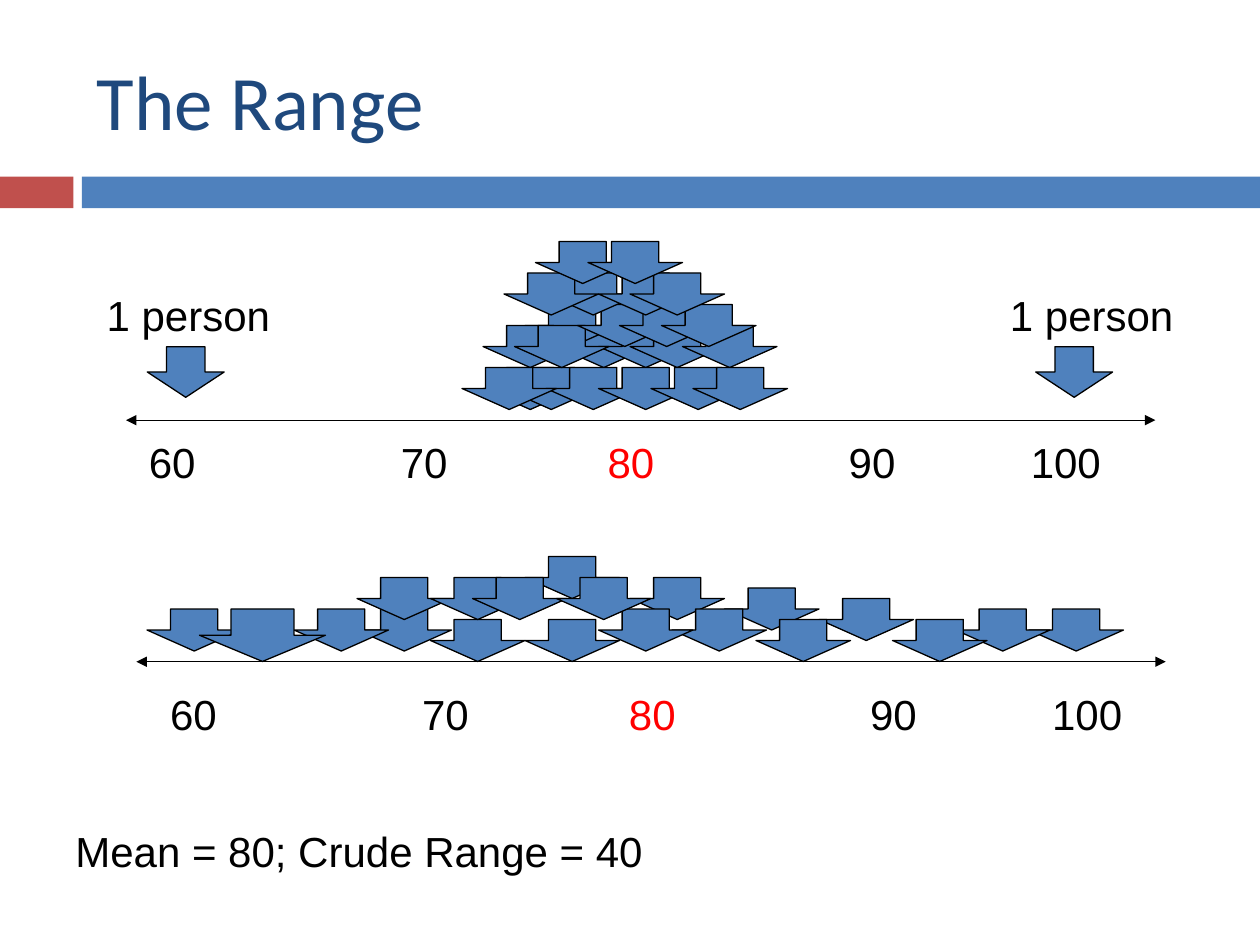
from lxml import etree
from pptx import Presentation
from pptx.dml.color import RGBColor
from pptx.enum.shapes import MSO_CONNECTOR, MSO_SHAPE
from pptx.enum.text import MSO_ANCHOR
from pptx.oxml.ns import qn
from pptx.util import Cm, Pt

RECT = MSO_SHAPE.RECTANGLE
DOWN_ARROW = MSO_SHAPE.DOWN_ARROW
STRAIGHT = MSO_CONNECTOR.STRAIGHT
MIDDLE = MSO_ANCHOR.MIDDLE
BLUE = RGBColor(0x4F, 0x81, 0xBD)
NAVY = RGBColor(0x1F, 0x49, 0x7D)
BRICK = RGBColor(0xC0, 0x50, 0x4D)
RED = RGBColor(0xFF, 0, 0)
BLACK = RGBColor(0, 0, 0)

GRID = 2.54 / 12  # the arrows sit on a grid of twelfths of an inch
TAB_STOPS = [5.08, 9.25, 14.11, 17.78]

# (row, columns) in grid steps, from back to front
CLUSTERED = [
    (35, [46, 48]), (31, [53]), (35, [52]), (31, [57, 60, 65]),
    (35, [57, 62, 66]), (29, [50]), (31, [46, 49]), (29, [55, 59, 63]),
    (26, [52, 57, 60]), (35, [44]), (26, [48]), (23, [51, 56]),
]
SPREAD = [
    (58, [14]), (55, [60]), (56, [69]), (58, [98, 91]), (59, [85]),
    (57, [78]), (59, [72]), (58, [64, 57]), (59, [50, 41]),
    (58, [34, 28]), (53, [50]), (55, [34, 41, 45, 53]),
]


def add_box(kind, left, top, width, height, fill, outlined=False):
    sp = s.shapes.add_shape(kind, Cm(left), Cm(top), Cm(width), Cm(height))
    sp.shadow.inherit = False
    sp.fill.solid()
    sp.fill.fore_color.rgb = fill
    if outlined:
        sp.line.color.rgb = BLACK
        sp.line.width = Pt(0.75)
    else:
        sp.line.fill.background()


def add_text(parts, left, top, width, height=1.27, font="Arial", size=24, wrap=True):
    """Add one paragraph made of (text, colour) parts and return its text frame."""
    sp = s.shapes.add_textbox(Cm(left), Cm(top), Cm(width), Cm(height))
    tf = sp.text_frame
    tf.word_wrap = wrap
    p = tf.paragraphs[0]
    p.font.name = font
    p.font.size = Pt(size)
    for text, color in parts:
        r = p.add_run()
        r.text = text
        r.font.color.rgb = color
    return tf


prs = Presentation()
prs.slide_width, prs.slide_height = Cm(25.4), Cm(19.05)
s = prs.slides.add_slide(prs.slide_layouts[6])

# Title and bar
add_box(RECT, 0, 3.56, 1.48, 0.64, BRICK)
add_box(RECT, 1.65, 3.56, 23.75, 0.64, BLUE)
title = add_text([("The Range", NAVY)], 1.7, 0.64, 22.66, 2.74, "Calibri", 44)
title.vertical_anchor = MIDDLE

# Number lines with their scales
for left, top, label_left, label_top in [(2.54, 8.47, 2.75, 8.68),
                                         (2.75, 13.34, 3.18, 13.76)]:
    axis = s.shapes.add_connector(STRAIGHT, Cm(left), Cm(top), Cm(left + 20.75), Cm(top))
    axis.line.color.rgb = BLACK
    axis.line.width = Pt(0.75)
    ln = axis.line._get_or_add_ln()
    for end in ("a:headEnd", "a:tailEnd"):
        etree.SubElement(ln, qn(end), type="triangle")
    etree.SubElement(axis._element.spPr, qn("a:effectLst"))

    tf = add_text([("60\t70\t", BLACK), ("80", RED), ("\t90\t100", BLACK)],
                  label_left, label_top, 19.9)
    pPr = tf.paragraphs[0]._p.get_or_add_pPr()
    tabs = etree.Element(qn("a:tabLst"))
    for stop in TAB_STOPS:
        etree.SubElement(tabs, qn("a:tab"), pos=str(Cm(stop)), algn="l")
    pPr.find(qn("a:defRPr")).addprevious(tabs)

# Single people at both ends
for arrow_left, label_left in [(20.88, 20.11), (2.97, 1.9)]:
    add_box(DOWN_ARROW, arrow_left, 6.99, 1.55, 1.02, BLUE, outlined=True)
    add_text([("1 person", BLACK)], label_left, 5.72, 4.23)

# Everyone else
for row, columns in CLUSTERED + SPREAD:
    for column in columns:
        add_box(DOWN_ARROW, column * GRID, row * GRID, 9 * GRID, 4 * GRID, BLUE, outlined=True)
add_box(DOWN_ARROW, 19 * GRID, 58 * GRID, 12 * GRID, 5 * GRID, BLUE, outlined=True)

add_text([("Mean = 80; Crude Range = 40", BLACK)], 1.27, 16.51, 12.06, wrap=False)

prs.save("out.pptx")
